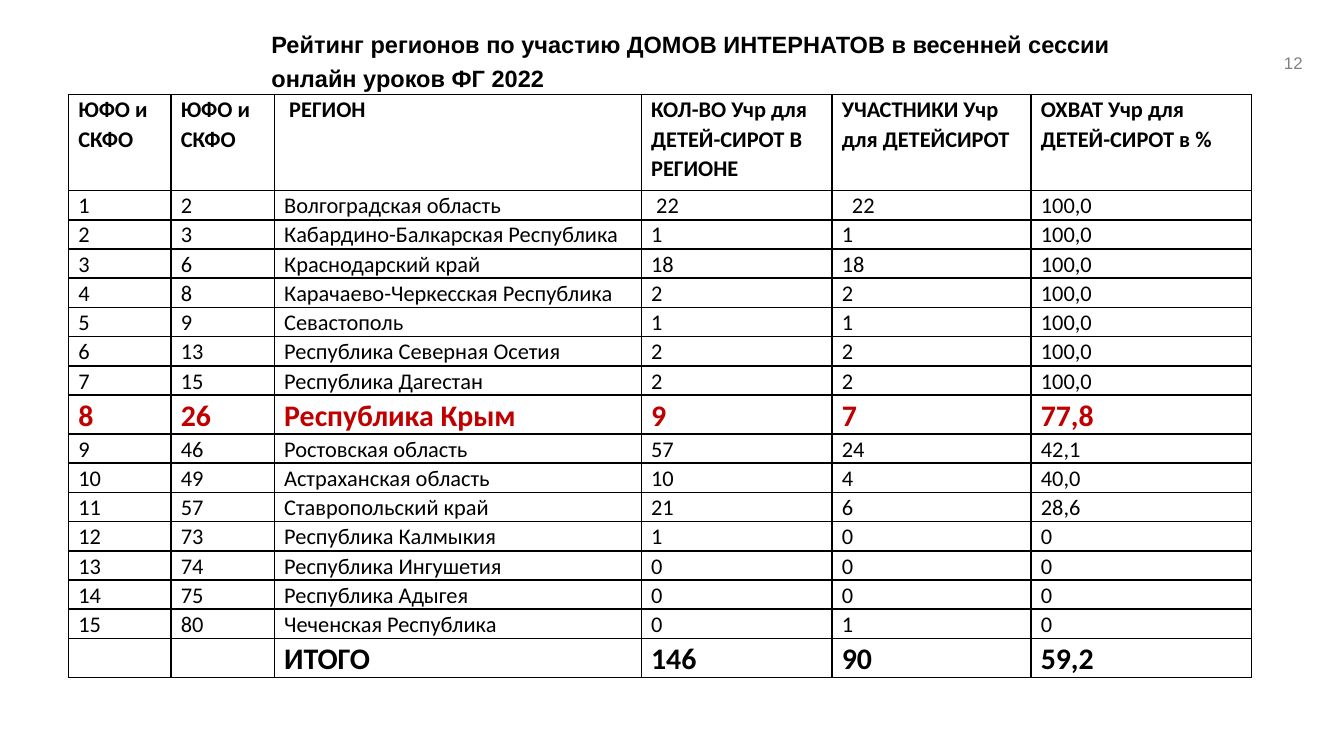
from pptx import Presentation
from pptx.dml.color import RGBColor
from pptx.enum import text as t
from pptx.oxml import parse_xml
from pptx.oxml.ns import nsdecls
from pptx.util import Pt

# Content
TITLE = "Рейтинг регионов по участию ДОМОВ ИНТЕРНАТОВ в весенней сессии онлайн уроков ФГ 2022"
PAGE = "12"
HEAD = ("ЮФО и СКФО", "ЮФО и СКФО", "РЕГИОН", "КОЛ-ВО Учр для ДЕТЕЙ-СИРОТ В РЕГИОНЕ",
        "УЧАСТНИКИ Учр для ДЕТЕЙСИРОТ", "ОХВАТ Учр для ДЕТЕЙ-СИРОТ в %")
REGIONS = [  # rank in the country, region, homes, taking part, share
    ("2", "Волгоградская область", "22", "22", "100,0"),
    ("3", "Кабардино-Балкарская Республика", "1", "1", "100,0"),
    ("6", "Краснодарский край", "18", "18", "100,0"),
    ("8", "Карачаево-Черкесская Республика", "2", "2", "100,0"),
    ("9", "Севастополь", "1", "1", "100,0"),
    ("13", "Республика Северная Осетия", "2", "2", "100,0"),
    ("15", "Республика Дагестан", "2", "2", "100,0"),
    ("26", "Республика Крым", "9", "7", "77,8"),
    ("46", "Ростовская область", "57", "24", "42,1"),
    ("49", "Астраханская область", "10", "4", "40,0"),
    ("57", "Ставропольский край", "21", "6", "28,6"),
    ("73", "Республика Калмыкия", "1", "0", "0"),
    ("74", "Республика Ингушетия", "0", "0", "0"),
    ("75", "Республика Адыгея", "0", "0", "0"),
    ("80", "Чеченская Республика", "0", "1", "0"),
]
TOTAL = ("", "", "ИТОГО", "146", "90", "59,2")
HOME = "Республика Крым"
COLORS = {"ink": "000000", "home": "C00000", "page": "808080"}

# Sizes in points
COLS = (54.9, 55.4, 196.6, 102.2, 106.6, 118.1)
HEAD_H, ROW_H, BIG_H = 51.4, 15.65, 20.9
INSET = 5.2
SHIFT = {(0, 2): 2.7, (1, 3): 2.7, (1, 4): 5.4}  # extra indent by row, column


def style(para, size, color, bold=False, face="Calibri"):
    font = para.font
    font.name, font.size, font.bold = face, Pt(size), bold
    font.color.rgb = RGBColor.from_string(COLORS[color])


def border(cell):
    props = cell._tc.get_or_add_tcPr()
    for i, side in enumerate(("lnL", "lnR", "lnT", "lnB")):
        props.insert(i, parse_xml(
            f'<a:{side} {nsdecls("a")} w="12700"><a:solidFill>'
            f'<a:srgbClr val="{COLORS["ink"]}"/></a:solidFill></a:{side}>'))


deck = Presentation()
deck.slide_width, deck.slide_height = Pt(720), Pt(405)
slide = deck.slides.add_slide(deck.slide_layouts[5])

# Title
title = slide.shapes.title
title.left, title.top, title.width, title.height = Pt(138.2), Pt(14.2), Pt(481.7), Pt(34)
frame = title.text_frame
frame.text = TITLE
frame.word_wrap = True
frame.auto_size = t.MSO_AUTO_SIZE.NONE
frame.vertical_anchor = t.MSO_ANCHOR.MIDDLE
para = frame.paragraphs[0]
para.alignment = t.PP_ALIGN.LEFT
para.line_spacing = Pt(18)
style(para, 12.6, "ink", True, "Arial")

# Page number
frame = slide.shapes.add_textbox(Pt(670.3), Pt(23), Pt(34.6), Pt(21.6)).text_frame
frame.text = PAGE
frame.word_wrap = True
frame.vertical_anchor = t.MSO_ANCHOR.MIDDLE
para = frame.paragraphs[0]
para.alignment = t.PP_ALIGN.RIGHT
style(para, 9, "page", face="Arial")

# Table
rows = [HEAD] + [(str(n), *row) for n, row in enumerate(REGIONS, 1)] + [TOTAL]
tall = [row is TOTAL or row[2] == HOME for row in rows]
highs = [HEAD_H] + [BIG_H if big else ROW_H for big in tall[1:]]
table = slide.shapes.add_table(len(rows), len(COLS), Pt(36.8), Pt(50.7),
                               Pt(sum(COLS)), Pt(sum(highs))).table
table.first_row = table.horz_banding = False
for col, width in zip(table.columns, COLS):
    col.width = Pt(width)
for r, row in enumerate(rows):
    table.rows[r].height = Pt(highs[r])
    for c, words in enumerate(row):
        cell = table.cell(r, c)
        cell.fill.background()
        border(cell)
        cell.margin_left = Pt(INSET + SHIFT.get((r, c), 0))
        cell.margin_right = Pt(INSET)
        cell.margin_top = cell.margin_bottom = 0
        cell.text = words
        para = cell.text_frame.paragraphs[0]
        para.line_spacing = 1.07 if words else Pt(16)
        style(para, 16 if tall[r] else 12, "home" if row[2] == HOME else "ink",
              r == 0 or tall[r])

deck.save("out.pptx")
